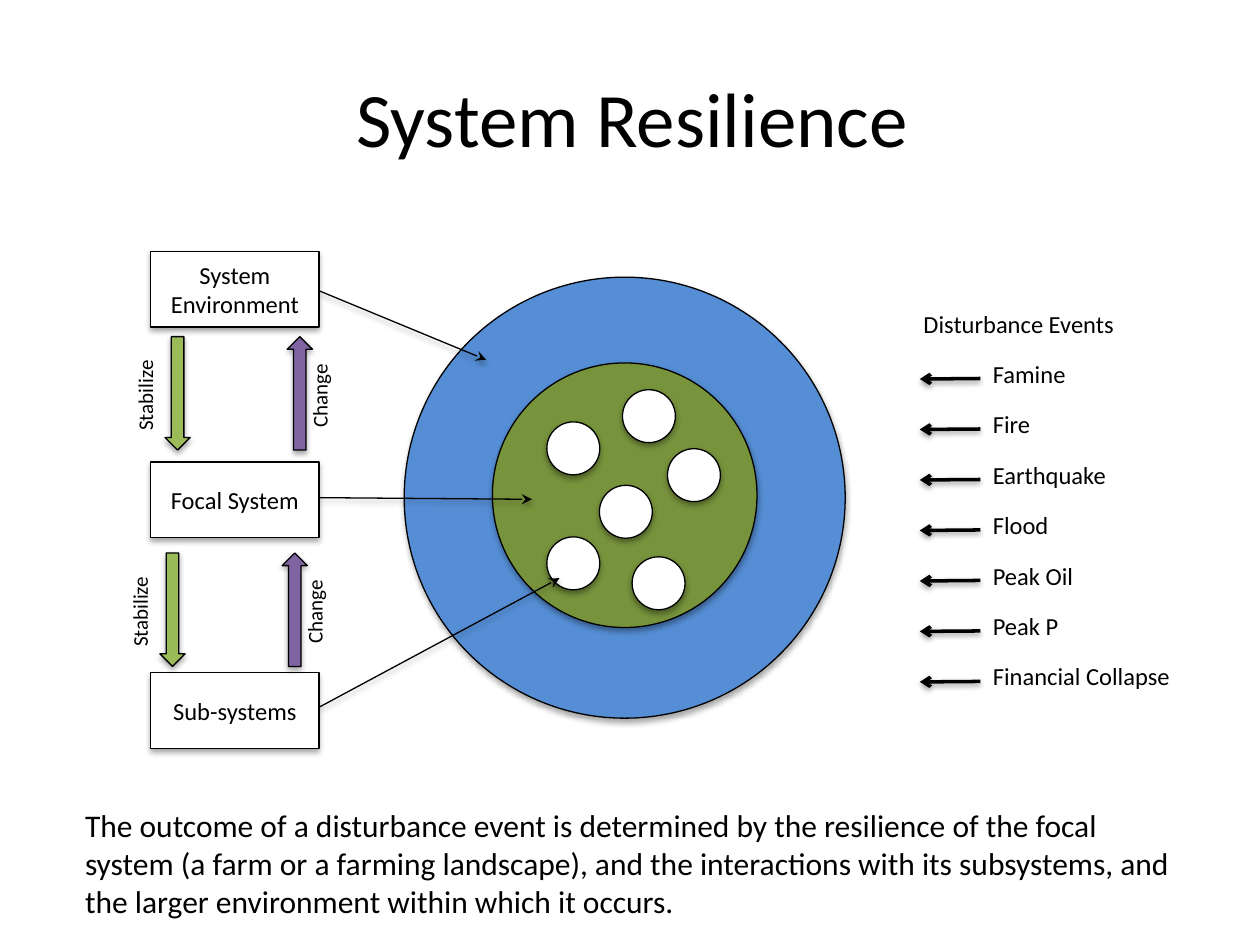
from lxml import etree
from pptx import Presentation
from pptx.dml.color import RGBColor
from pptx.enum import shapes, text
from pptx.oxml import ns
from pptx.util import Pt

BLACK = RGBColor(0x00, 0x00, 0x00)
WHITE = RGBColor(0xFF, 0xFF, 0xFF)
BLUE = RGBColor(0x55, 0x8E, 0xD5)
OLIVE = RGBColor(0x77, 0x93, 0x3C)
GREEN = RGBColor(0x9B, 0xBB, 0x59)
PURPLE = RGBColor(0x80, 0x64, 0xA2)
SHAPE = shapes.MSO_SHAPE
ALIGN = text.PP_ALIGN
ANCHOR = text.MSO_ANCHOR

EVENTS = ["Famine", "Fire", "Earthquake", "Flood", "Peak Oil", "Peak P", "Financial Collapse"]
LEVELS = [
    ("System Environment", (0.522, 1, 1.436, 1.995)),
    ("Focal System", (0.473, 1, 0.495, 2.268)),
    ("Sub-systems", (0.459, 1, -1.25, 2.432)),
]
SUBSYSTEMS = [(81.5, 82.7), (111.5, 118.9), (124.7, 64.3), (81.5, 148.4), (130.2, 159.8), (150.4, 98)]
OUTCOME = (
    "The outcome of a disturbance event is determined by the resilience of the focal system "
    "(a farm or a farming landscape), and the interactions with its subsystems, and the larger "
    "environment within which it occurs."
)


def set_text(tf, lines, size=14, align=ALIGN.LEFT, anchor=ANCHOR.TOP, after=0, wrap=True):
    """Fill a text frame with one paragraph per line."""
    tf.word_wrap = wrap
    tf.vertical_anchor = anchor
    for i, line in enumerate(lines):
        p = tf.add_paragraph() if i else tf.paragraphs[0]
        p.alignment = align
        p.space_after = Pt(after)
        r = p.add_run()
        r.text = line
        r.font.size = Pt(size)
        r.font.name = "Calibri"
        r.font.color.rgb = BLACK


def add_text(s, box, lines, **fmt):
    """Add a text box that grows with its text."""
    sp = s.shapes.add_textbox(*map(Pt, box))
    set_text(sp.text_frame, lines, **fmt)
    sp.text_frame.auto_size = text.MSO_AUTO_SIZE.SHAPE_TO_FIT_TEXT
    return sp


def outline(sp, width, alpha, distance, head=None):
    """Give a shape or connector its black line, arrowhead and soft shadow."""
    sp.line.color.rgb = BLACK
    sp.line.width = Pt(width)
    if head:
        etree.SubElement(sp.line._get_or_add_ln(), ns.qn("a:tailEnd"), type=head)
    effects = etree.SubElement(sp._element.spPr, ns.qn("a:effectLst"))
    shadow = etree.SubElement(
        effects, ns.qn("a:outerShdw"), blurRad=str(Pt(3.15)), dist=str(Pt(distance)),
        dir="5400000", rotWithShape="0")
    color = etree.SubElement(shadow, ns.qn("a:srgbClr"), val=str(BLACK))
    etree.SubElement(color, ns.qn("a:alpha"), val=str(alpha * 1000))


def add_shape(s, kind, box, fill, head=None):
    """Add a filled, outlined and shadowed preset shape."""
    sp = s.shapes.add_shape(kind, *map(Pt, box))
    sp.fill.solid()
    sp.fill.fore_color.rgb = fill
    outline(sp, 0.75, 35, 1.8, head)
    return sp


def add_title(s, box):
    """Place and fill the title placeholder."""
    sp = s.shapes.title
    sp.left, sp.top, sp.width, sp.height = map(Pt, box)
    set_text(sp.text_frame, ["System Resilience"], size=44, align=ALIGN.CENTER, anchor=ANCHOR.MIDDLE)


def add_nested_system(s, x, y, size):
    """Draw the environment, the focal system and its subsystems."""
    add_shape(s, SHAPE.OVAL, (x, y, size, size), BLUE)
    add_shape(s, SHAPE.OVAL, (x + 50.4, y + 49, size * 0.6, size * 0.6), OLIVE)
    for dx, dy in SUBSYSTEMS:
        add_shape(s, SHAPE.OVAL, (x + dx, y + dy, size * 0.12, size * 0.12), WHITE)


def add_levels(s, x, y, w, h, pitch):
    """Stack the callouts that point into the nested system."""
    for i, (label, adjustments) in enumerate(LEVELS):
        sp = add_shape(s, SHAPE.LINE_CALLOUT_1, (x, y + i * pitch, w, h), WHITE, "stealth")
        for n, value in enumerate(adjustments):
            sp.adjustments[n] = value
        set_text(sp.text_frame, [label], align=ALIGN.CENTER, anchor=ANCHOR.MIDDLE)


def add_feedback(s, x, y, w, h):
    """Draw the stabilize and change arrows between two levels."""
    for label, dx, fill, turn, label_dx, label_w in (
        ("Stabilize", 0, GREEN, 0, -38.9, 54.7),
        ("Change", 69.8, PURPLE, 180, 62.7, 51.1),
    ):
        sp = add_shape(s, SHAPE.DOWN_ARROW, (x + dx, y, w, h), fill)
        sp.rotation = turn
        tx = add_text(s, (x + label_dx, y + 22.6, label_w, 21.6), [label], size=12, wrap=False)
        tx.rotation = 270


def add_events(s, x, y, pitch):
    """List the disturbance events, each with an arrow to the left."""
    add_text(s, (x, y, 123.8, 24.5), ["Disturbance Events"], wrap=False)
    add_text(s, (x + 39.6, y + 28.8, 116.6, 198.7), EVENTS, after=12, wrap=False)
    for i in range(len(EVENTS)):
        line_y = y + 43.5 + i * pitch
        cx = s.shapes.add_connector(
            shapes.MSO_CONNECTOR.STRAIGHT, Pt(x + 39.6), Pt(line_y), Pt(x + 5), Pt(line_y + 0.3))
        outline(cx, 2, 38, 1.6, "arrow")


def main():
    """Build the slide and save it."""
    prs = Presentation()
    prs.slide_width, prs.slide_height = Pt(720), Pt(540)
    s = prs.slides.add_slide(prs.slide_layouts[5])
    add_title(s, (37.4, 21.6, 648, 90))
    add_nested_system(s, 231, 158.4, 252)
    add_levels(s, 86.2, 143.6, 96, 43.2, 120.4)
    add_text(s, (41.5, 457.2, 635, 72.7), [OUTCOME], size=18)
    for x, y in ((94.3, 192.4), (91.4, 316)):
        add_feedback(s, x, y, 14.4, 64.8)
    add_events(s, 520.6, 172.8, 28.85)
    prs.save("out.pptx")


if __name__ == "__main__":
    main()
